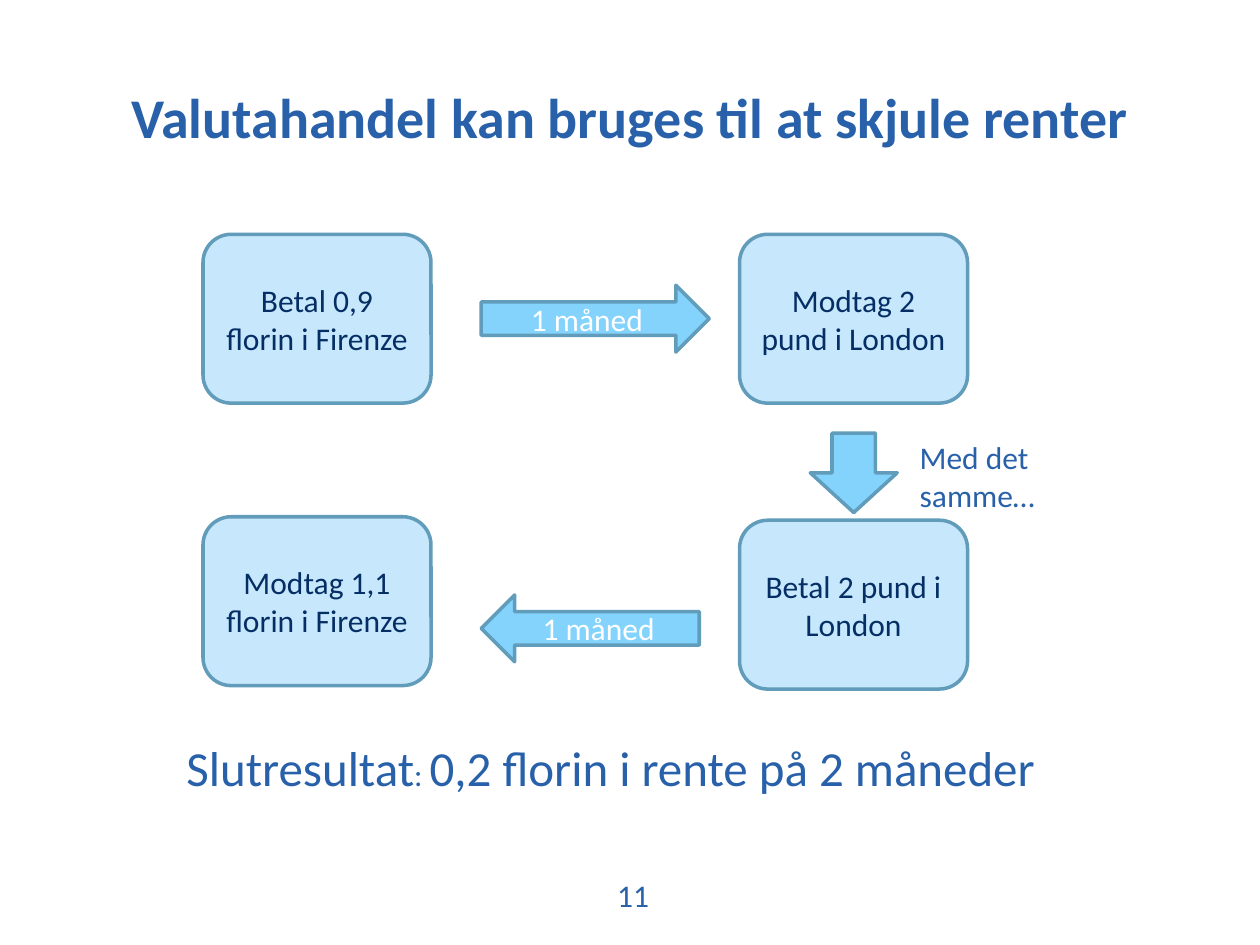
from pptx import Presentation
from pptx import util as u
from pptx.dml import color
from pptx.enum import shapes, text

BLUE, NAVY, WHITE = "2861A9", "052E65", "FFFFFF"
PALE, SKY, EDGE = "C6E7FC", "83D3FD", "619CBB"
KIND = shapes.MSO_SHAPE
CENTER, LEFT = text.PP_ALIGN.CENTER, text.PP_ALIGN.LEFT


def paint(target, hex_color):
    target.rgb = color.RGBColor.from_string(hex_color)


def style(paragraph, size, hex_color, align=CENTER, bold=False):
    paragraph.alignment = align
    for run in paragraph.runs:
        run.font.name = "Calibri"
        run.font.size = u.Pt(size)
        run.font.bold = bold
        paint(run.font.color, hex_color)


prs = Presentation()
prs.slide_width, prs.slide_height = u.Pt(720), u.Pt(540)
slide = prs.slides.add_slide(prs.slide_layouts[5])

title = slide.shapes.title
title.left, title.top, title.width, title.height = u.Pt(36), u.Pt(21.6), u.Pt(648), u.Pt(90)
title.text_frame.text = "Valutahandel kan bruges til at skjule renter"
title.text_frame.vertical_anchor = text.MSO_ANCHOR.MIDDLE
style(title.text_frame.paragraphs[0], 32, BLUE, bold=True)

box_w, box_h = 130.3, 96.5
florence_x, london_x, out_y = 116, 422.6, 133.9
steps = [
    (KIND.ROUNDED_RECTANGLE, florence_x, out_y, box_w, box_h, "Betal 0,9 florin i Firenze", PALE, NAVY),
    (KIND.ROUNDED_RECTANGLE, florence_x, 295.3, box_w, box_h, "Modtag 1,1 florin i Firenze", PALE, NAVY),
    (KIND.ROUNDED_RECTANGLE, london_x, 297.3, box_w, box_h, "Betal 2 pund i London", PALE, NAVY),
    (KIND.ROUNDED_RECTANGLE, london_x, out_y, box_w, box_h, "Modtag 2 pund i London", PALE, NAVY),
    (KIND.RIGHT_ARROW, 275, 163, box_w, 38.2, "1 måned", SKY, WHITE),
    (KIND.LEFT_ARROW, 275, 340, 124.6, 38.2, "1 måned", SKY, WHITE),
    (KIND.DOWN_ARROW, 463, 247.5, 49.7, 45.4, "", SKY, WHITE),
]
for kind, x, y, width, height, wording, fill, ink in steps:
    step = slide.shapes.add_shape(kind, u.Pt(x), u.Pt(y), u.Pt(width), u.Pt(height))
    step.shadow.inherit = False
    step.fill.solid()
    paint(step.fill.fore_color, fill)
    paint(step.line.color, EDGE)
    step.line.width = u.Pt(2)
    step.text_frame.text = wording
    step.text_frame.vertical_anchor = text.MSO_ANCHOR.MIDDLE
    style(step.text_frame.paragraphs[0], 18, ink)

captions = [
    (59.8, 417.6, 578.2, 39.6, [("Slutresultat", 28), (": ", 18), ("0,2 florin i rente på 2 måneder", 28)], CENTER),
    (518.4, 247, 102.2, 51.1, [("Med det samme…", 18)], LEFT),
    (337.7, 496.8, 48.2, 30.2, [("11", 18)], CENTER),
]
for x, y, width, height, pieces, align in captions:
    caption = slide.shapes.add_textbox(u.Pt(x), u.Pt(y), u.Pt(width), u.Pt(height))
    caption.text_frame.word_wrap = True
    line = caption.text_frame.paragraphs[0]
    for wording, size in pieces:
        line.add_run().text = wording
    style(line, 18, BLUE, align)
    for run, (wording, size) in zip(line.runs, pieces):
        run.font.size = u.Pt(size)

prs.save("out.pptx")
